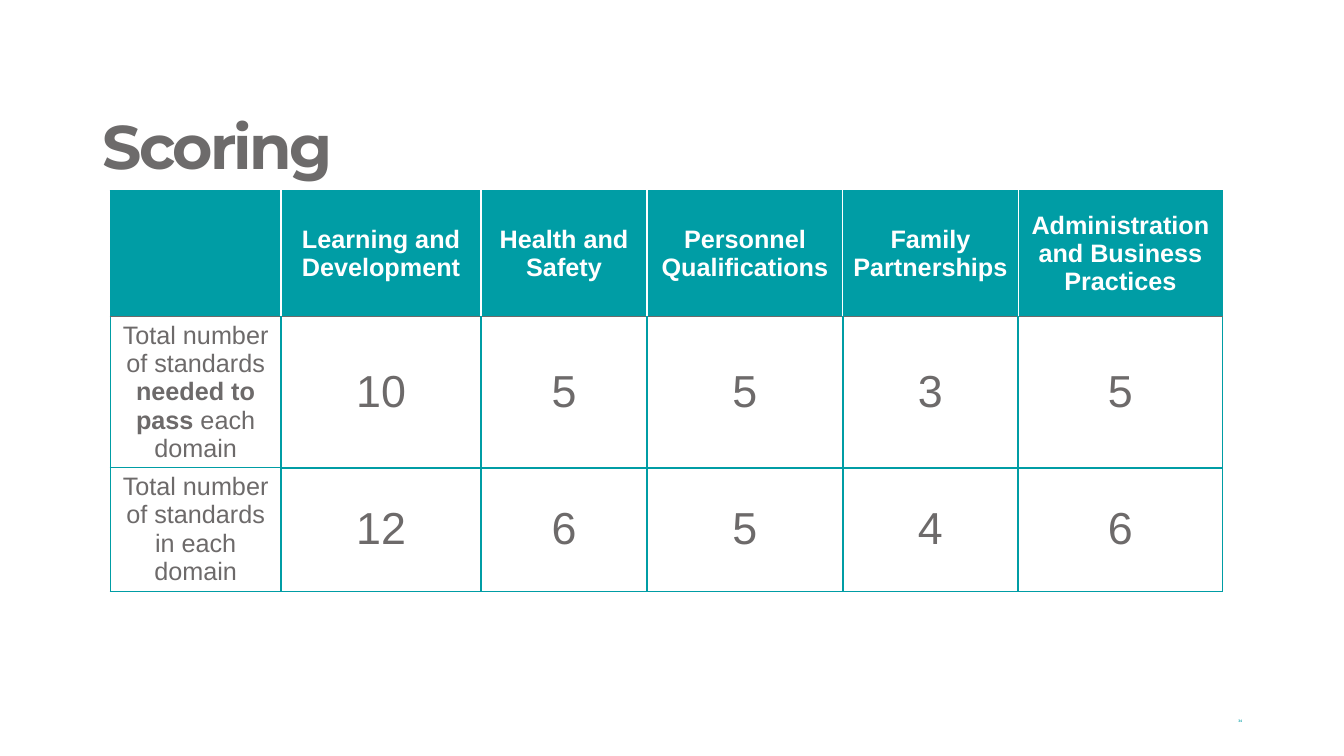
from dataclasses import dataclass

from lxml import etree
from pptx import Presentation
from pptx import util as u
from pptx.dml.color import RGBColor
from pptx.enum import text
from pptx.oxml import ns

TEAL = RGBColor(0x00, 0x9D, 0xA5)
GRAY = RGBColor(0x6D, 0x6A, 0x6A)
TITLE = RGBColor(0x6D, 0x6B, 0x6B)
WHITE = RGBColor(0xFF, 0xFF, 0xFF)

WIDE, HIGH = u.Inches(13.33), u.Inches(7.5)


@dataclass(frozen=True)
class Box:
    """A frame in percent of the slide's width and height."""
    left: float
    top: float
    width: float
    height: float


@dataclass(frozen=True)
class Edge:
    color: RGBColor
    width: float


@dataclass(frozen=True)
class Domain:
    name: str
    need: int
    total: int
    width: float


HEAD_BOX = Box(6.9, 5.33, 71.27, 19.33)
GRID_BOX = Box(8.18, 25.2, 82.81, 52.97)
PAGE_BOX = Box(70.67, 92.67, 22.5, 5.33)
LABEL_WIDTH = 12.75
ROWS = (16.67, 20, 16.3)

DOMAINS = (
    Domain("Learning and Development", 10, 12, 14.85),
    Domain("Health and Safety", 5, 6, 12.38),
    Domain("Personnel Qualifications", 5, 5, 14.55),
    Domain("Family Partnerships", 3, 4, 13.05),
    Domain("Administration and Business Practices", 5, 6, 15.23),
)
# Row labels as (words, bold) runs
NEED = (("Total number of standards ", False), ("needed to pass", True),
        (" each domain", False))
TOTAL = (("Total number of standards in each domain", False),)

THIN, THICK = Edge(TEAL, 0.5), Edge(TEAL, 1.5)
RULE = Edge(GRAY, 1)


def across(share: float) -> int:
    return round(WIDE * share / 100)


def down(share: float) -> int:
    return round(HIGH * share / 100)


def frame(box: Box) -> tuple[int, int, int, int]:
    return across(box.left), down(box.top), across(box.width), down(box.height)


def style(par, face: str, size: float, color: RGBColor, bold=None) -> None:
    font = par.font
    font.name, font.size, font.bold = face, u.Pt(size), bold
    font.color.rgb = color


def upright(row: int, line: int) -> Edge:
    """Edge on the given vertical grid line."""
    if line in (0, len(DOMAINS) + 1):
        return THIN
    if row == 0:
        return Edge(WHITE, 1.5 if line < 4 else 1)
    return THICK


def level(line: int, col: int) -> Edge:
    """Edge on the given horizontal grid line."""
    if line == 1:
        return RULE
    return THICK if line == 2 and col > 0 else THIN


def border(cell, row: int, col: int) -> None:
    props = cell._tc.get_or_add_tcPr()
    sides = {"L": upright(row, col), "R": upright(row, col + 1),
             "T": level(row, col), "B": level(row + 1, col)}
    for side, edge in sides.items():
        line = etree.SubElement(props, ns.qn(f"a:ln{side}"), w=str(u.Pt(edge.width)))
        fill = etree.SubElement(line, ns.qn("a:solidFill"))
        etree.SubElement(fill, ns.qn("a:srgbClr"), val=str(edge.color))


def write(cell, row: int, col: int, runs) -> None:
    par = cell.text_frame.paragraphs[0]
    par.alignment = text.PP_ALIGN.CENTER
    size = 32 if row and col else 18
    style(par, "Arial", size, GRAY if row else WHITE)
    for words, bold in runs:
        run = par.add_run()
        run.text, run.font.bold = words, bold


def add_title(slide) -> None:
    head = slide.shapes.title
    head.left, head.top, head.width, head.height = frame(HEAD_BOX)
    body = head.text_frame
    body.text = "Scoring"
    body.auto_size = text.MSO_AUTO_SIZE.NONE
    body.vertical_anchor = text.MSO_ANCHOR.BOTTOM
    par = body.paragraphs[0]
    par.alignment = text.PP_ALIGN.LEFT
    par.line_spacing = u.Pt(44)
    style(par, "Montserrat", 44, TITLE, True)
    # Tighten the letters by two points
    par.runs[0]._r.get_or_add_rPr().set("spc", "-200")


def add_grid(slide) -> None:
    rows = (
        [()] + [((d.name, True),) for d in DOMAINS],
        [NEED] + [((str(d.need), False),) for d in DOMAINS],
        [TOTAL] + [((str(d.total), False),) for d in DOMAINS],
    )
    grid = slide.shapes.add_table(len(rows), len(rows[0]), *frame(GRID_BOX)).table
    grid.first_row = grid.horz_banding = False
    for col, share in zip(grid.columns, (LABEL_WIDTH, *(d.width for d in DOMAINS))):
        col.width = across(share)
    for row, share in zip(grid.rows, ROWS):
        row.height = down(share)
    for r, row in enumerate(rows):
        for c, runs in enumerate(row):
            cell = grid.cell(r, c)
            border(cell, r, c)
            cell.fill.solid()
            cell.fill.fore_color.rgb = WHITE if r else TEAL
            if c or not r:
                cell.vertical_anchor = text.MSO_ANCHOR.MIDDLE
            write(cell, r, c, runs)


def add_page(slide) -> None:
    body = slide.shapes.add_textbox(*frame(PAGE_BOX)).text_frame
    body.word_wrap = True
    body.vertical_anchor = text.MSO_ANCHOR.MIDDLE
    par = body.paragraphs[0]
    par.text = "34"
    par.alignment = text.PP_ALIGN.RIGHT
    style(par, "Cabin", 2.5, TEAL, True)


def main() -> None:
    deck = Presentation()
    deck.slide_width, deck.slide_height = WIDE, HIGH
    slide = deck.slides.add_slide(deck.slide_layouts[5])
    add_title(slide)
    add_grid(slide)
    add_page(slide)
    deck.save("out.pptx")


if __name__ == "__main__":
    main()
